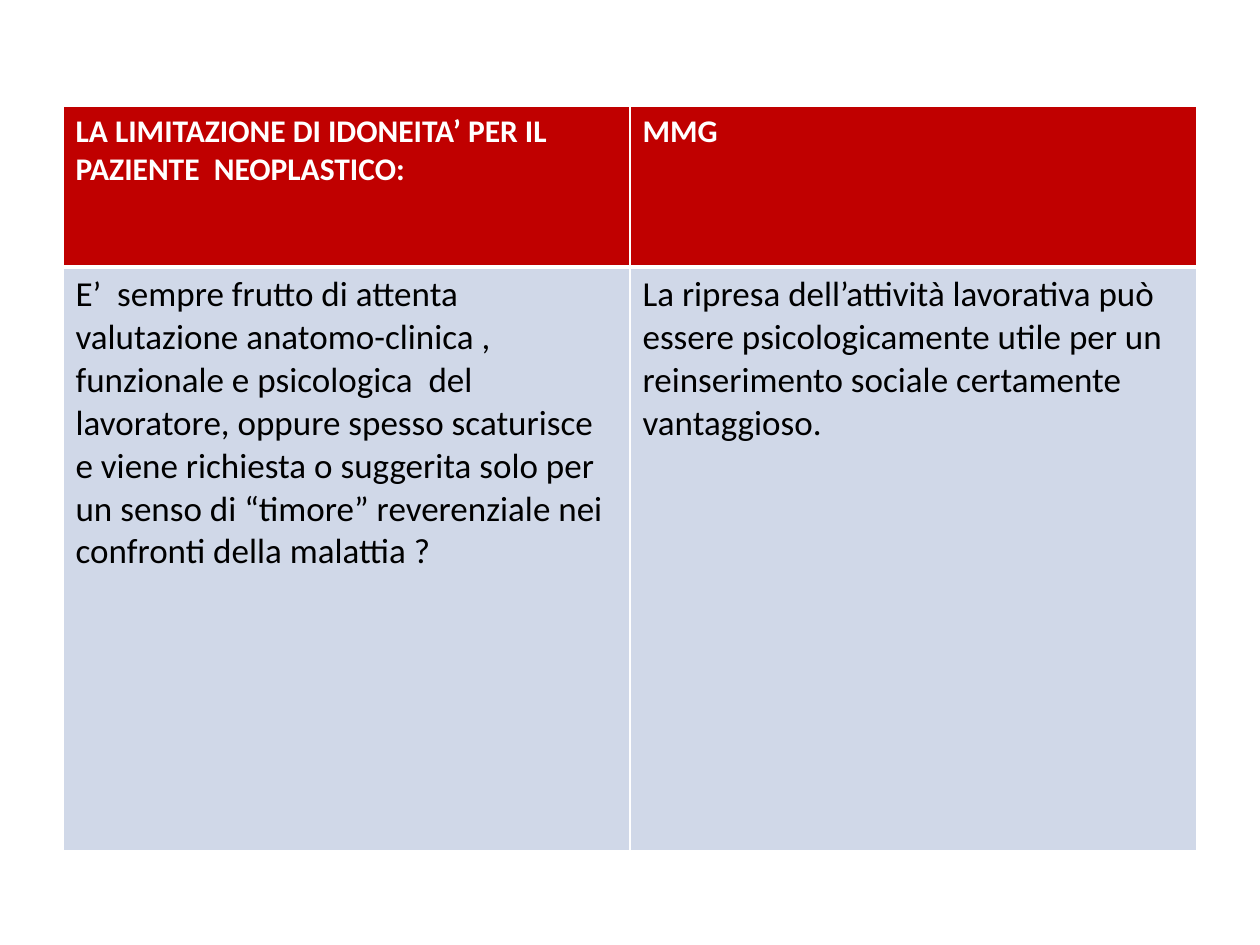
from dataclasses import dataclass

from lxml import etree
from pptx import Presentation
from pptx import util as u
from pptx.dml.color import RGBColor
from pptx.oxml.ns import qn
from pptx.table import _Cell

WHITE = RGBColor(0xFF, 0xFF, 0xFF)
BLACK = RGBColor(0x00, 0x00, 0x00)
RED = RGBColor(0xC0, 0x00, 0x00)
PALE_BLUE = RGBColor(0xD0, 0xD8, 0xE8)

SLIDE_WIDTH, SLIDE_HEIGHT = u.Inches(10), u.Inches(7.5)
MARGIN = 0.05  # share of the slide's width
TABLE_TOP = u.Inches(0.84)
FONT = "Calibri"


@dataclass(frozen=True)
class Row:
    height: float  # inches
    texts: tuple[str, ...]
    size: int
    color: RGBColor
    fill: RGBColor
    bold: bool
    top_line: int  # points
    bottom_line: int


ROWS = (
    Row(1.28, ("LA LIMITAZIONE DI IDONEITA’ PER IL PAZIENTE  NEOPLASTICO:", "MMG"),
        size=18, color=WHITE, fill=RED, bold=True, top_line=1, bottom_line=3),
    Row(4.63, ("E’  sempre frutto di attenta valutazione anatomo-clinica , "
               "funzionale e psicologica  del  lavoratore, oppure spesso scaturisce "
               "e viene richiesta o suggerita solo per un senso di “timore” "
               "reverenziale nei confronti della malattia ?",
               "La ripresa dell’attività lavorativa può essere psicologicamente "
               "utile per un reinserimento sociale certamente vantaggioso."),
        size=20, color=BLACK, fill=PALE_BLUE, bold=False, top_line=3, bottom_line=1),
)


def write_text(cell: _Cell, text: str, *, size: int, color: RGBColor, bold: bool) -> None:
    span = cell.text_frame.paragraphs[0].add_run()
    span.text = text
    span.font.name = FONT
    span.font.size = u.Pt(size)
    span.font.bold = bold
    span.font.color.rgb = color


def draw_borders(cell: _Cell, *, top: int, bottom: int, side: int = 1) -> None:
    properties = cell._tc.get_or_add_tcPr()
    widths = {"a:lnL": side, "a:lnR": side, "a:lnT": top, "a:lnB": bottom}
    # Border lines come before the fill in the cell properties
    for position, (tag, width) in enumerate(widths.items()):
        line = etree.Element(qn(tag), w=str(u.Pt(width)))
        solid = etree.SubElement(line, qn("a:solidFill"))
        etree.SubElement(solid, qn("a:srgbClr"), val=str(WHITE))
        properties.insert(position, line)


def fill_cell(cell: _Cell, text: str, row: Row) -> None:
    cell.fill.solid()
    cell.fill.fore_color.rgb = row.fill
    write_text(cell, text, size=row.size, color=row.color, bold=row.bold)
    draw_borders(cell, top=row.top_line, bottom=row.bottom_line)


def main() -> None:
    deck = Presentation()
    deck.slide_width, deck.slide_height = SLIDE_WIDTH, SLIDE_HEIGHT
    page = deck.slides.add_slide(deck.slide_layouts[6])

    # Two equal columns between the side margins
    left = int(SLIDE_WIDTH * MARGIN)
    height = u.Inches(sum(row.height for row in ROWS))
    table = page.shapes.add_table(len(ROWS), len(ROWS[0].texts), left, TABLE_TOP,
                                  SLIDE_WIDTH - 2 * left, height).table

    # Red heading row above the pale body row
    for index, row in enumerate(ROWS):
        table.rows[index].height = u.Inches(row.height)
        for column, content in enumerate(row.texts):
            fill_cell(table.cell(index, column), content, row)

    deck.save("out.pptx")


if __name__ == "__main__":
    main()
